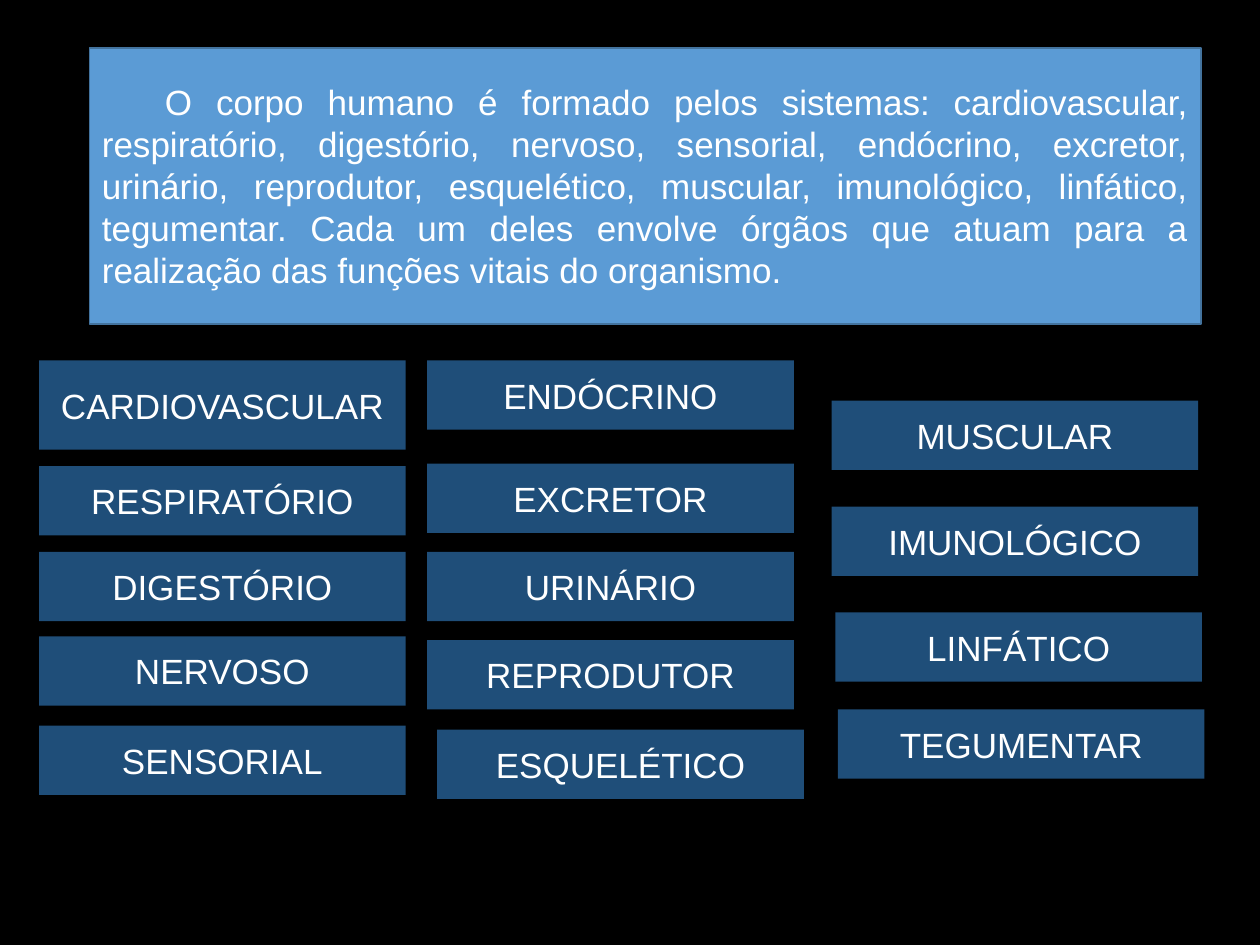
"""Build a slide listing the systems of the human body."""
from pptx import Presentation
from pptx.dml.color import RGBColor
from pptx.enum.shapes import MSO_SHAPE
from pptx.enum.text import MSO_ANCHOR, PP_ALIGN
from pptx.util import Inches, Pt

BLACK = RGBColor(0x00, 0x00, 0x00)
WHITE = RGBColor(0xFF, 0xFF, 0xFF)
LIGHT_BLUE = RGBColor(0x5B, 0x9B, 0xD5)
EDGE_BLUE = RGBColor(0x43, 0x73, 0x9E)
DARK_BLUE = RGBColor(0x1F, 0x4E, 0x79)

INTRODUCTION = (
    "O corpo humano é formado pelos sistemas: cardiovascular, respiratório, "
    "digestório, nervoso, sensorial, endócrino, excretor, urinário, reprodutor, "
    "esquelético, muscular, imunológico, linfático, tegumentar. Cada um deles "
    "envolve órgãos que atuam para a realização das funções vitais do organismo."
)
LABEL_WIDTH = 2.91
LABEL_HEIGHT = 0.55
SYSTEMS = [
    ("CARDIOVASCULAR", 0.31, 2.86, 0.71),
    ("RESPIRATÓRIO", 0.31, 3.7, LABEL_HEIGHT),
    ("DIGESTÓRIO", 0.31, 4.38, LABEL_HEIGHT),
    ("NERVOSO", 0.31, 5.05, LABEL_HEIGHT),
    ("SENSORIAL", 0.31, 5.76, LABEL_HEIGHT),
    ("ENDÓCRINO", 3.39, 2.86, LABEL_HEIGHT),
    ("EXCRETOR", 3.39, 3.68, LABEL_HEIGHT),
    ("URINÁRIO", 3.39, 4.38, LABEL_HEIGHT),
    ("REPRODUTOR", 3.39, 5.08, LABEL_HEIGHT),
    ("ESQUELÉTICO", 3.47, 5.79, LABEL_HEIGHT),
    ("MUSCULAR", 6.6, 3.18, LABEL_HEIGHT),
    ("IMUNOLÓGICO", 6.6, 4.02, LABEL_HEIGHT),
    ("LINFÁTICO", 6.63, 4.86, LABEL_HEIGHT),
    ("TEGUMENTAR", 6.65, 5.63, LABEL_HEIGHT),
]

deck = Presentation()
deck.slide_width, deck.slide_height = Inches(10), Inches(7.5)
page = deck.slides.add_slide(deck.slide_layouts[6])
page.background.fill.solid()
page.background.fill.fore_color.rgb = BLACK


def add_box(text, *, left, top, width, height, fill, edge=None,
            align=PP_ALIGN.CENTER, indent=0):
    box = page.shapes.add_shape(MSO_SHAPE.RECTANGLE, Inches(left), Inches(top),
                                Inches(width), Inches(height))
    box.shadow.inherit = False
    box.fill.solid()
    box.fill.fore_color.rgb = fill
    if edge is None:
        box.line.fill.background()
    else:
        box.line.color.rgb = edge
        box.line.width = Pt(1)
    frame = box.text_frame
    frame.word_wrap = True
    frame.vertical_anchor = MSO_ANCHOR.MIDDLE
    paragraph = frame.paragraphs[0]
    paragraph.alignment = align
    if indent:
        paragraph._p.get_or_add_pPr().set("indent", str(Inches(indent)))
    span = paragraph.add_run()
    span.text = text
    span.font.name = "Arial"
    span.font.size = Pt(20)
    span.font.color.rgb = WHITE


add_box(INTRODUCTION, left=0.71, top=0.38, width=8.82, height=2.19,
        fill=LIGHT_BLUE, edge=EDGE_BLUE, align=PP_ALIGN.JUSTIFY, indent=0.5)

for name, left, top, height in SYSTEMS:
    add_box(name, left=left, top=top, width=LABEL_WIDTH, height=height,
            fill=DARK_BLUE)

deck.save("out.pptx")
